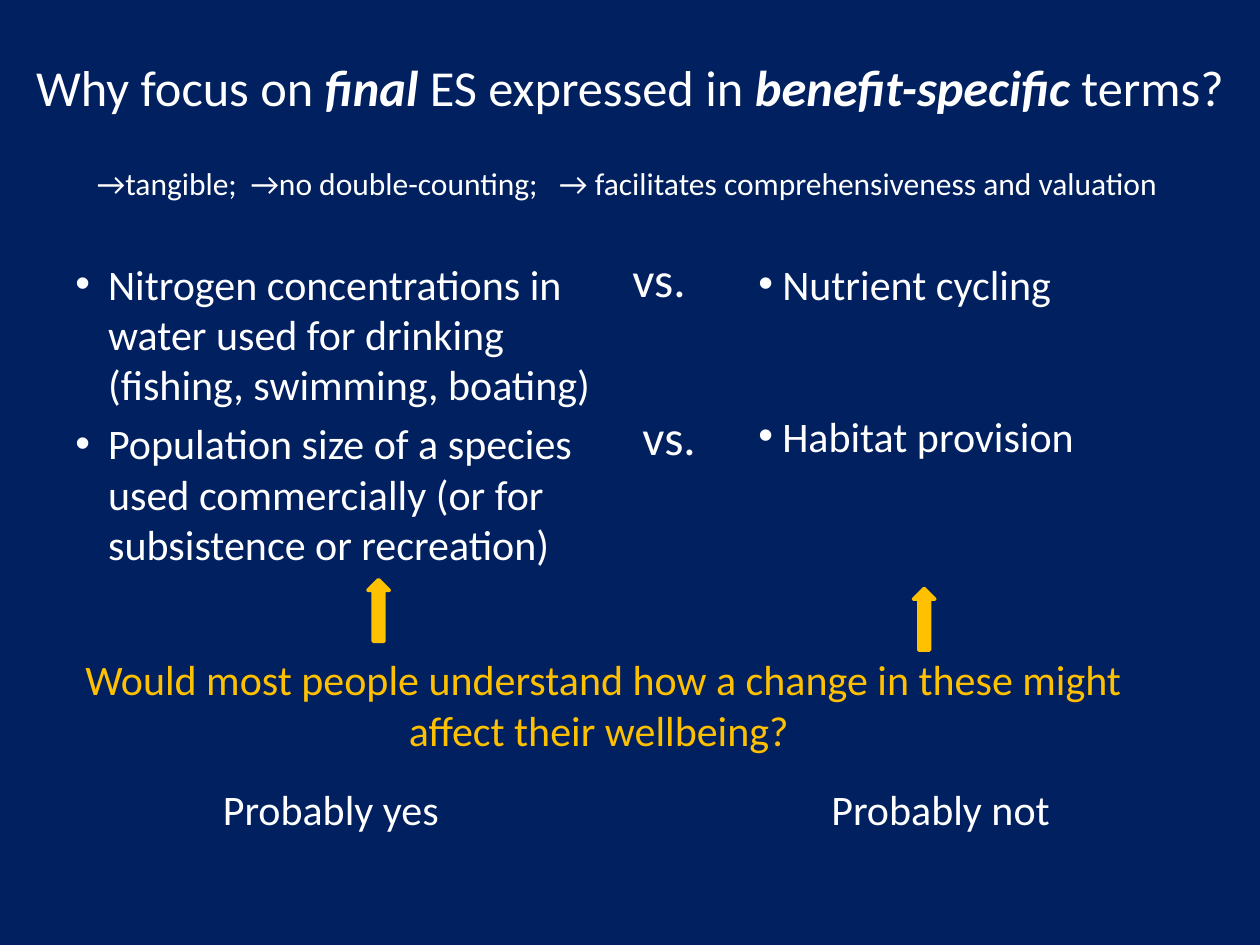
from lxml.etree import SubElement
from pptx import Presentation
from pptx.dml.color import RGBColor
from pptx.enum.shapes import MSO_SHAPE
from pptx.enum.text import MSO_ANCHOR, PP_ALIGN
from pptx.oxml.ns import qn
from pptx.util import Inches, Pt

NAVY = RGBColor(0x00, 0x20, 0x60)
WHITE = RGBColor(0xFF, 0xFF, 0xFF)
GOLD = RGBColor(0xFF, 0xC0, 0x00)


def format_runs(paragraph, size, color=WHITE):
    for run in paragraph.runs:
        run.font.name = "Calibri"
        run.font.size = Pt(size)
        run.font.color.rgb = color


def add_text(left, top, width, height, lines, size=24, color=WHITE,
             hanging=0, gap=0):
    """Add a text box; a hanging indent turns its lines into bullets."""
    box = slide.shapes.add_textbox(
        Inches(left), Inches(top), Inches(width), Inches(height))
    text_frame = box.text_frame
    text_frame.word_wrap = True
    text_frame.text = "\n".join(lines)
    for index, paragraph in enumerate(text_frame.paragraphs):
        if index and gap:
            paragraph.space_before = Pt(gap)
        if hanging:
            properties = paragraph._p.get_or_add_pPr()
            properties.set("marL", str(Inches(hanging)))
            properties.set("indent", str(-Inches(hanging)))
            SubElement(properties, qn("a:buFont"), typeface="Arial")
            SubElement(properties, qn("a:buChar"), char="•")
        format_runs(paragraph, size, color)
    return text_frame.paragraphs[0]


presentation = Presentation()
presentation.slide_width = Inches(10)
presentation.slide_height = Inches(7.5)
slide = presentation.slides.add_slide(presentation.slide_layouts[5])
slide.background.fill.solid()
slide.background.fill.fore_color.rgb = NAVY

# Title with emphasised words
title = slide.shapes.title
title.left, title.top = Inches(0), Inches(0.25)
title.width, title.height = presentation.slide_width, Inches(0.87)
title.text_frame.vertical_anchor = MSO_ANCHOR.MIDDLE
title_paragraph = title.text_frame.paragraphs[0]
title_paragraph.alignment = PP_ALIGN.CENTER
for text, emphasised in [("Why focus on ", False), ("final", True),
                         (" ES expressed in ", False),
                         ("benefit-specific", True), (" terms?", False)]:
    run = title_paragraph.add_run()
    run.text = text
    run.font.bold = run.font.italic = emphasised
format_runs(title_paragraph, 28.8)

# Reasons, spaced by tab stops
reasons = add_text(
    0.67, 1.25, 9, 0.4,
    ["→tangible;\t→no double-counting;\t"
     "→ facilitates comprehensiveness and valuation"], size=18)
tab_list = SubElement(reasons._p.get_or_add_pPr(), qn("a:tabLst"))
for position in (1.22, 3.67):
    SubElement(tab_list, qn("a:tab"), pos=str(Inches(position)), algn="l")

# Final services compared with general ones
add_text(0.5, 2, 4.75, 2.67,
         ["Nitrogen concentrations in water used for drinking "
          "(fishing, swimming, boating)",
          "Population size of a species used commercially "
          "(or for subsistence or recreation)"], hanging=0.26, gap=4.8)
add_text(5.92, 2, 4.08, 2.12, ["Nutrient cycling", "Habitat provision"],
         hanging=0.19, gap=58)
for left, top in [(4.92, 1.92), (5, 3.18)]:
    add_text(left, top, 0.75, 0.57, ["vs."], size=28)

# Arrows from the question up to each column
for left, top in [(2.92, 4.6), (7.25, 4.67)]:
    arrow = slide.shapes.add_shape(
        MSO_SHAPE.UP_ARROW, Inches(left), Inches(top),
        Inches(0.17), Inches(0.49))
    arrow.shadow.inherit = False
    arrow.fill.solid()
    arrow.fill.fore_color.rgb = GOLD
    arrow.line.color.rgb = GOLD
    arrow.line.width = Pt(2)

# Question and answers
question = add_text(
    0.25, 5.14, 9.08, 0.91,
    ["Would most people understand how a change in these might "
     "affect their wellbeing? "], color=GOLD)
question.alignment = PP_ALIGN.CENTER
for left, width, answer in [(1.67, 2.58, "Probably yes"),
                            (6.5, 2.83, "Probably not")]:
    add_text(left, 6.17, width, 0.5, [answer])

presentation.save("out.pptx")
